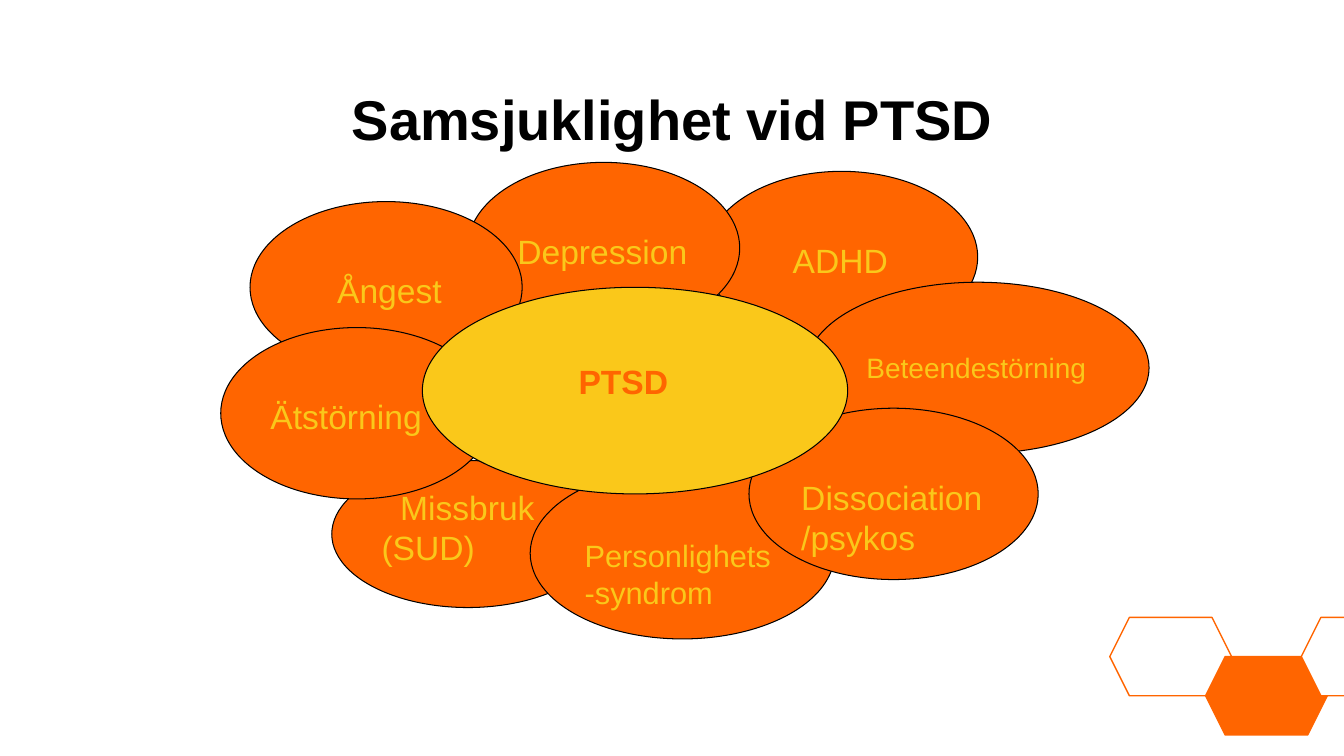
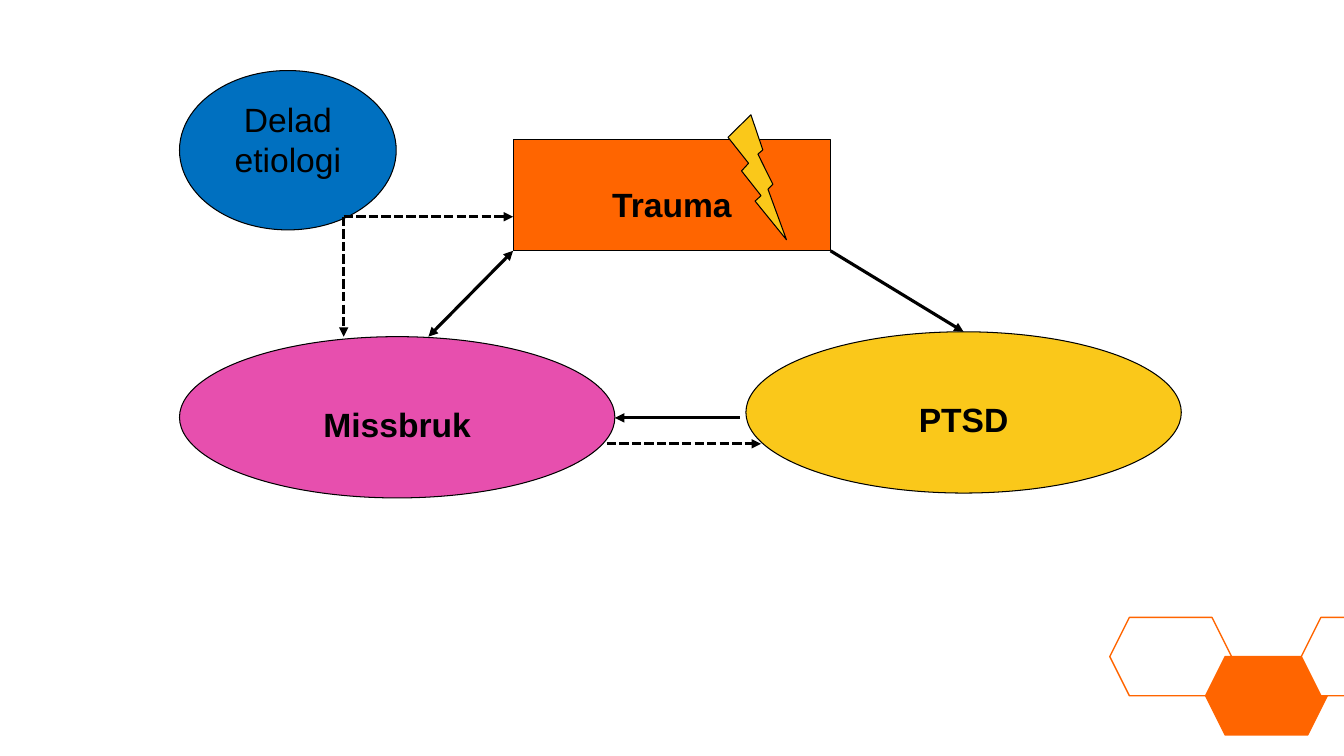
"""Build two slides on conditions that occur together with PTSD."""
from dataclasses import dataclass

from lxml import etree
from pptx import Presentation
from pptx.dml.color import RGBColor
from pptx.enum.dml import MSO_LINE
from pptx.enum.shapes import MSO_CONNECTOR, MSO_SHAPE
from pptx.enum.text import MSO_ANCHOR, PP_ALIGN
from pptx.oxml.ns import qn
from pptx.util import Pt

ELLIPSE, RECTANGLE = MSO_SHAPE.OVAL, MSO_SHAPE.RECTANGLE
HEXAGON, BOLT = MSO_SHAPE.HEXAGON, MSO_SHAPE.LIGHTNING_BOLT
STRAIGHT = MSO_CONNECTOR.STRAIGHT
DASHED = MSO_LINE.SQUARE_DOT
LEFT, CENTER = PP_ALIGN.LEFT, PP_ALIGN.CENTER
TOP, MIDDLE = MSO_ANCHOR.TOP, MSO_ANCHOR.MIDDLE


@dataclass(frozen=True)
class Theme:
    """Colours and type shared by the slides."""
    black: RGBColor = RGBColor(0x00, 0x00, 0x00)
    white: RGBColor = RGBColor(0xFF, 0xFF, 0xFF)
    orange: RGBColor = RGBColor(0xFF, 0x65, 0x00)
    yellow: RGBColor = RGBColor(0xFA, 0xC8, 0x1A)
    pink: RGBColor = RGBColor(0xE7, 0x4F, 0xAE)
    blue: RGBColor = RGBColor(0x00, 0x70, 0xC0)
    font: str = "Arial"
    title: float = 40
    label: float = 24
    label_medium: float = 22
    label_small: float = 20
    label_line: float = 27.6


THEME = Theme()


def draw_shape(slide, kind, box, fill, outline=THEME.black, weight=0.75):
    shape = slide.shapes.add_shape(kind, *(Pt(length) for length in box))
    shape.shadow.inherit = False
    shape.fill.solid()
    shape.fill.fore_color.rgb = fill
    shape.line.color.rgb = outline
    shape.line.width = Pt(weight)
    return shape


def write_label(shape, text, color, size=THEME.label, bold=False,
                align=CENTER, lines_above=1, indent=0):
    frame = shape.text_frame
    frame.word_wrap = True
    frame.vertical_anchor = TOP
    frame.margin_top = Pt(3.6 + lines_above * THEME.label_line)
    frame.margin_right = Pt(7.2 if align == CENTER else 0)
    para = frame.paragraphs[0]
    para.text = text
    para.alignment = align
    para._p.get_or_add_pPr().set("indent", str(Pt(indent)))
    para.font.name = THEME.font
    para.font.size = Pt(size)
    para.font.bold = bold
    para.font.color.rgb = color


deck = Presentation()
deck.slide_width, deck.slide_height = Pt(960), Pt(540)
comorbidity = deck.slides.add_slide(deck.slide_layouts[5])
causes = deck.slides.add_slide(deck.slide_layouts[6])

master_tree = deck.slide_master.shapes._spTree
hexagons = [(441, THEME.white), (469, THEME.orange), (441, THEME.white)]
for index, (top, fill) in enumerate(hexagons):
    box = (792.7 + 68.4 * index, top, 87, 56)
    hexagon = draw_shape(comorbidity, HEXAGON, box, fill, THEME.orange, 1)
    hexagon._element.nvSpPr.cNvPr.set("id", str(20 + index))
    master_tree.append(hexagon._element)

title = comorbidity.shapes.title
title.left, title.top, title.width, title.height = Pt(48), Pt(54), Pt(864), Pt(61)
title.text_frame.text = "Samsjuklighet vid PTSD"
title.text_frame.vertical_anchor = MIDDLE
heading = title.text_frame.paragraphs[0]
heading.alignment = CENTER
heading.font.name = THEME.font
heading.font.size = Pt(THEME.title)
heading.font.bold = True
heading.font.color.rgb = THEME.black

petals = [
    ("Missbruk\v(SUD)", (237, 329, 194.4, 105), THEME.label, 0, 13.3),
    ("ADHD", (504, 122.4, 194.4, 122.4), THEME.label, 1, 26.7),
    ("Depression", (334, 116, 194.4, 122.4), THEME.label, 1, 0),
    ("Beteendestörning", (576, 201.6, 244.8, 122.4), THEME.label_small, 1, 0),
    ("Personlighets\v-syndrom", (378.7, 334, 217.4, 122.4), THEME.label_medium, 1, 0),
    ("Dissociation\v/psykos", (535, 291.6, 206.6, 122.4), THEME.label, 1, 0),
    ("Ångest", (178.6, 144, 194.4, 122.4), THEME.label, 1, 26.7),
    ("Ätstörning", (157.7, 234, 194.4, 122.4), THEME.label, 1, 0),
]
for text, box, size, lines_above, indent in petals:
    petal = draw_shape(comorbidity, ELLIPSE, box, THEME.orange)
    write_label(petal, text, THEME.yellow, size, False, LEFT, lines_above, indent)
core = draw_shape(comorbidity, ELLIPSE, (301.7, 205.2, 303.8, 147.6), THEME.yellow)
write_label(core, "PTSD", THEME.orange, bold=True, align=LEFT, indent=60)

trauma = draw_shape(causes, RECTANGLE, (366.5, 100, 226.8, 79.2), THEME.orange)
abuse = draw_shape(causes, ELLIPSE, (128.2, 240.5, 311, 115.2), THEME.pink)
ptsd = draw_shape(causes, ELLIPSE, (532.8, 237, 311, 115.2), THEME.yellow)
for shape, text in ((trauma, "Trauma"), (abuse, "Missbruk"), (ptsd, "PTSD")):
    write_label(shape, text, THEME.black, bold=True)
etiology = draw_shape(causes, ELLIPSE, (128.2, 50.4, 154.8, 113.8), THEME.blue)
write_label(etiology, "Delad etiologi", THEME.black, lines_above=0)
draw_shape(causes, BOLT, (520, 82, 41.8, 89.3), THEME.yellow)

arrows = [
    ((528.5, 298.5), (439.2, 298.5), False, ["tailEnd"], None),
    ((306, 240.5), (366.5, 179.2), False, ["headEnd", "tailEnd"], None),
    ((593.3, 179.2), (688.3, 237), False, ["tailEnd"], ptsd),
    ((433.4, 317), (543.6, 317), True, ["tailEnd"], None),
    ((245.5, 154.8), (245.5, 240.5), True, ["tailEnd"], None),
    ((245.5, 154.8), (366.5, 154.8), True, ["tailEnd"], None),
]
for start, end, dashed, heads, target in arrows:
    arrow = causes.shapes.add_connector(
        STRAIGHT, *(Pt(length) for length in start + end))
    if target is not None:
        arrow.end_connect(target, 0)
    arrow.line.color.rgb = THEME.black
    arrow.line.width = Pt(2.25)
    if dashed:
        arrow.line.dash_style = DASHED
    for head in heads:
        etree.SubElement(arrow.line._get_or_add_ln(), qn("a:" + head), type="triangle")
    etree.SubElement(arrow._element.spPr, qn("a:effectLst"))

deck.save("out.pptx")
